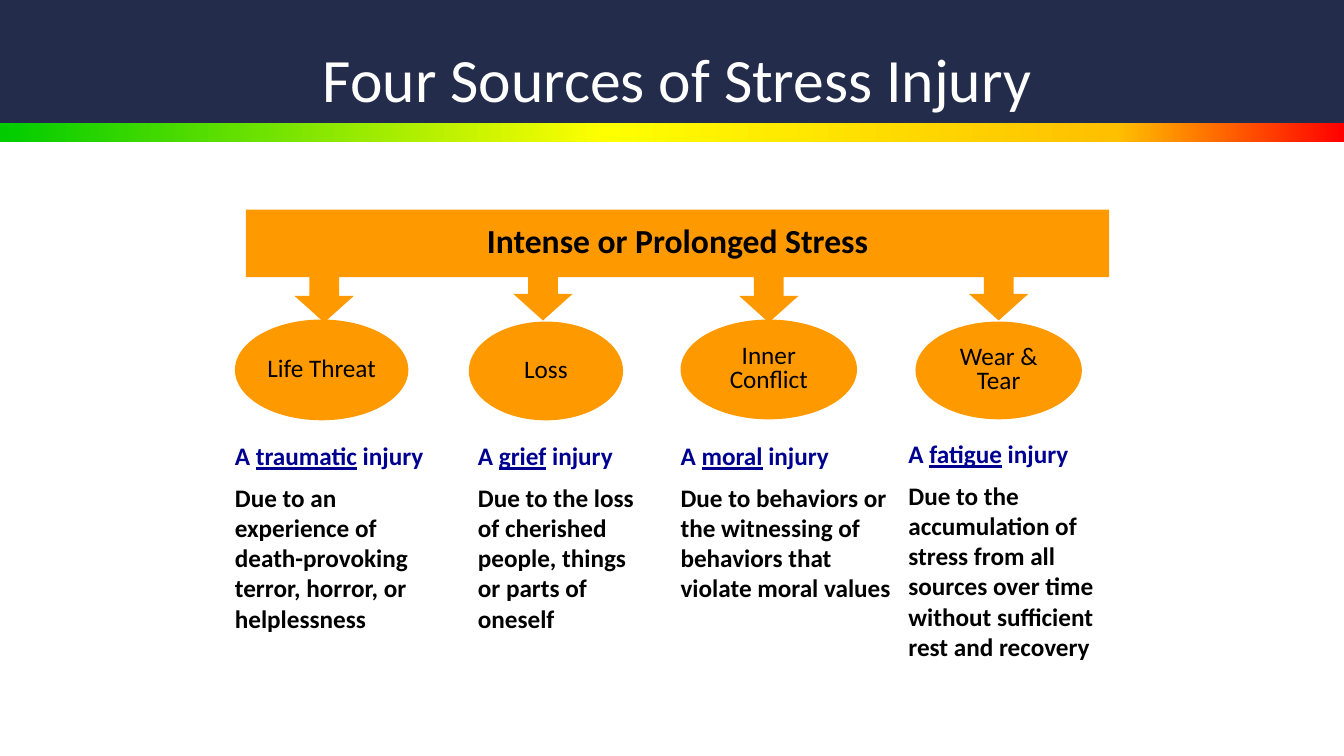
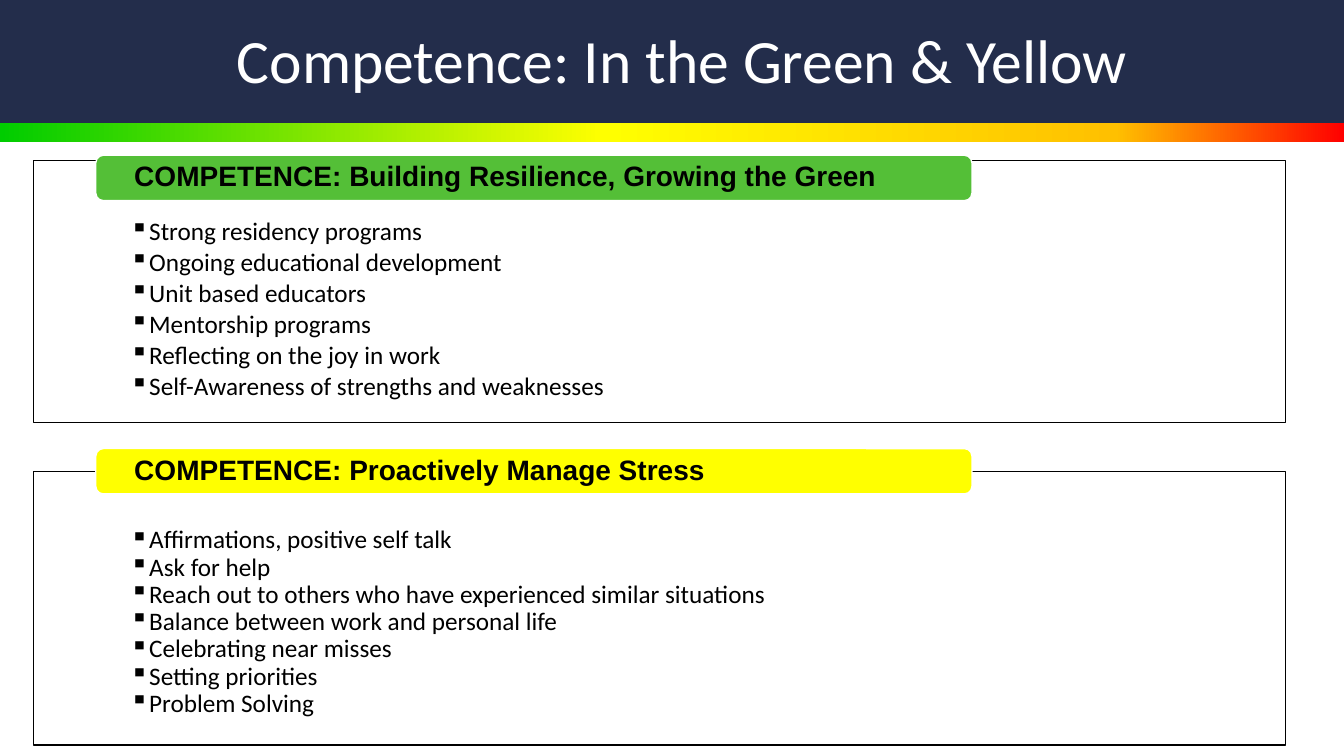
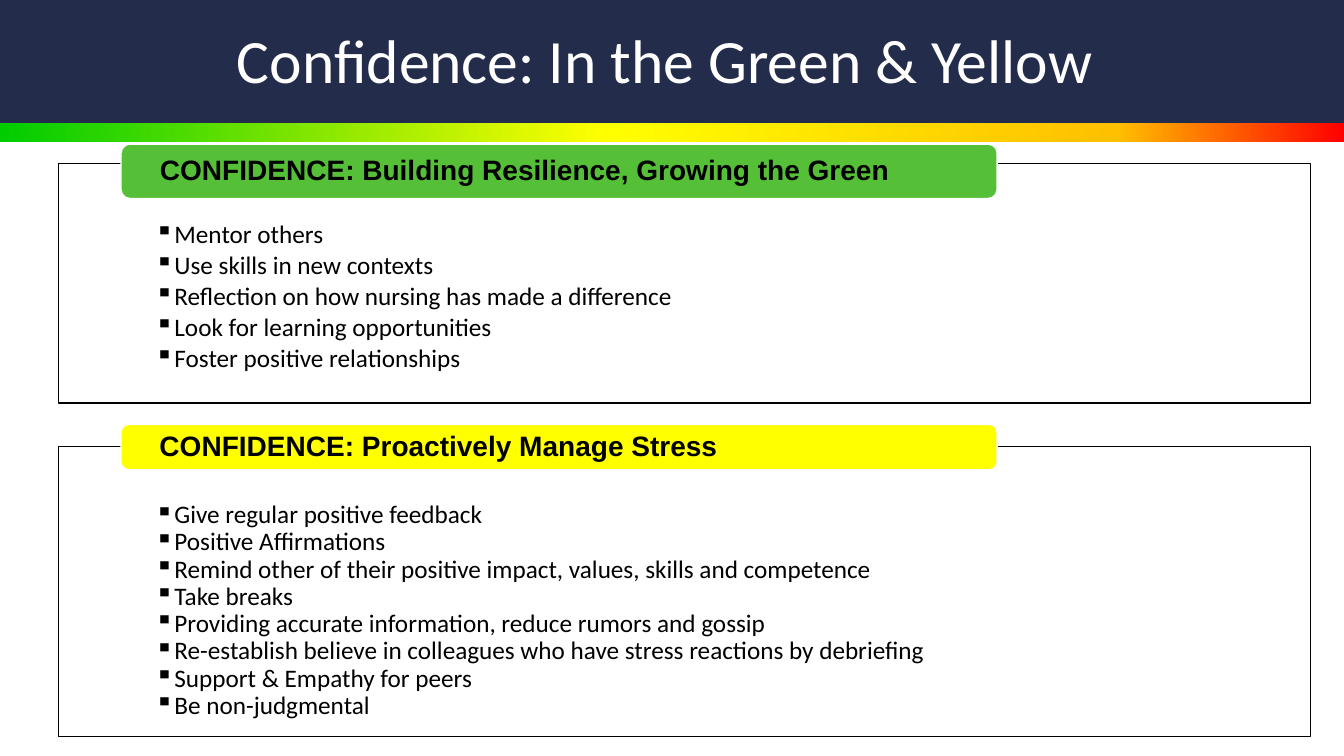
import pptx
import pptx.util
import pptx.dml.color
import pptx.enum.shapes
import pptx.enum.text
import pptx.oxml.ns
import lxml.etree

PX = 9144
SLIDE_WIDTH, SLIDE_HEIGHT = 1333, 750

RGBColor = pptx.dml.color.RGBColor
NAVY = RGBColor(0x23, 0x2D, 0x4B)
WHITE = RGBColor(0xFF, 0xFF, 0xFF)
BLACK = RGBColor(0x00, 0x00, 0x00)
ORANGE = RGBColor(0xFF, 0x99, 0x00)
BLUE = RGBColor(0x00, 0x00, 0x90)
GREEN = RGBColor(0x54, 0xBF, 0x37)
YELLOW = RGBColor(0xFF, 0xFF, 0x00)
SPECTRUM = [
    (0, RGBColor(0x00, 0xCC, 0x00)),
    (45, YELLOW),
    (83, RGBColor(0xFF, 0xC0, 0x00)),
    (100, RGBColor(0xFF, 0x00, 0x00)),
]

SHAPE = pptx.enum.shapes.MSO_SHAPE
ALIGN = pptx.enum.text.PP_ALIGN
ANCHOR = pptx.enum.text.MSO_ANCHOR
qn = pptx.oxml.ns.qn


def add_box(page, kind, place, fill=None, insets=(0, 0, 0, 0), anchor=ANCHOR.MIDDLE):
    lengths = [value * PX for value in place]
    if kind is None:
        box = page.shapes.add_textbox(*lengths)
    else:
        box = page.shapes.add_shape(kind, *lengths)
        box.shadow.inherit = False
        box.line.fill.background()
        box.fill.solid()
        box.fill.fore_color.rgb = fill
    frame = box.text_frame
    frame.word_wrap = True
    frame.vertical_anchor = anchor
    frame.margin_left, frame.margin_top, frame.margin_right, frame.margin_bottom = [
        value * PX for value in insets]
    return box


def format_text(para, size, color, align=ALIGN.LEFT, spacing=0.9, font="Calibri", bold=False):
    para.alignment = align
    para.line_spacing = spacing
    for span in para.runs:
        span.font.size = pptx.util.Pt(size)
        span.font.name = font
        span.font.bold = bold
        span.font.color.rgb = color


deck = pptx.Presentation()
deck.slide_width = SLIDE_WIDTH * PX
deck.slide_height = SLIDE_HEIGHT * PX

titles = [
    ("Four Sources of Stress Injury", (94, 27, 1156, 110), ALIGN.CENTER),
    ("Competence: In the Green & Yellow", (225, 8, 1017, 110), ALIGN.LEFT),
    ("Confidence: In the Green & Yellow", (225, 8, 1017, 110), ALIGN.LEFT),
]
pages = []
for title, place, align in titles:
    page = deck.slides.add_slide(deck.slide_layouts[6])
    pages.append(page)
    stripe = add_box(page, SHAPE.RECTANGLE, (0, 122, SLIDE_WIDTH, 19), YELLOW)
    stripe.fill.gradient()
    stripe.fill.gradient_angle = 0
    stops = stripe._element.spPr.find(".//" + qn("a:gsLst"))
    for stop in list(stops):
        stops.remove(stop)
    for percent, color in SPECTRUM:
        stop = lxml.etree.SubElement(stops, qn("a:gs"), pos=str(percent * 1000))
        lxml.etree.SubElement(stop, qn("a:srgbClr"), val=str(color))
    add_box(page, SHAPE.RECTANGLE, (0, 0, SLIDE_WIDTH, 122), NAVY)
    title_box = add_box(page, None, place, insets=(10, 5, 10, 5))
    title_box.text_frame.text = title
    format_text(title_box.text_frame.paragraphs[0], 44, WHITE, align)

sources_page, competence_page, confidence_page = pages

sources = [
    ("Life Threat", (233, 317, 172, 100), (292, 267), (233, 437, 197, 234), "traumatic",
     "Due to an experience of death-provoking terror, horror, or helplessness"),
    ("Loss", (465, 319, 153, 98), (509, 265), (474, 437, 174, 193), "grief",
     "Due to the loss of cherished people, things or parts of oneself"),
    ("Inner Conflict", (675, 317, 175, 99), (733, 267), (675, 437, 211, 161), "moral",
     "Due to behaviors or the witnessing of behaviors that violate moral values"),
    ("Wear & Tear", (908, 319, 165, 97), (961, 265), (901, 435, 216, 262), "fatigue",
     "Due to the accumulation of stress from all sources over time "
     "without sufficient rest and recovery"),
]
for source, oval_place, arrow_corner, note_place, injury, cause in sources:
    oval = add_box(sources_page, SHAPE.OVAL, oval_place, ORANGE)
    oval.text_frame.text = source
    format_text(oval.text_frame.paragraphs[0], 18, BLACK, ALIGN.CENTER, 0.8)

    add_box(sources_page, SHAPE.DOWN_ARROW, (*arrow_corner, 59, 53), ORANGE)

    note = add_box(sources_page, None, note_place, anchor=ANCHOR.TOP).text_frame
    heading = note.paragraphs[0]
    for words in ("A ", injury, " injury"):
        span = heading.add_run()
        span.text = words
        span.font.underline = words == injury
    detail = note.add_paragraph()
    detail.text = cause
    for para, color in ((heading, BLUE), (detail, BLACK)):
        para.space_before = pptx.util.Pt(8)
        format_text(para, 18, color, spacing=1.0, bold=True)

stress_bar = add_box(sources_page, SHAPE.RECTANGLE, (244, 208, 856, 67), ORANGE, (10, 10, 10, 10))
stress_bar.text_frame.text = "Intense or Prolonged Stress"
format_text(stress_bar.text_frame.paragraphs[0], 24, BLACK, ALIGN.CENTER, 0.8, bold=True)

panels = [
    (competence_page, 33, (159, 260), (154, 45), GREEN, 2.7,
     "COMPETENCE: Building Resilience, Growing the Green",
     ["Strong residency programs", "Ongoing educational development", "Unit based educators",
      "Mentorship programs", "Reflecting on the joy in work",
      "Self-Awareness of strengths and weaknesses"]),
    (competence_page, 33, (468, 271), (445, 45), YELLOW, 0,
     "COMPETENCE: Proactively Manage Stress",
     ["Affirmations, positive self talk", "Ask for help",
      "Reach out to others who have experienced similar situations",
      "Balance between work and personal life", "Celebrating near misses",
      "Setting priorities", "Problem Solving"]),
    (confidence_page, 58, (162, 238), (143, 54), GREEN, 2.7,
     "CONFIDENCE: Building Resilience, Growing the Green",
     ["Mentor others", "Use skills in new contexts",
      "Reflection on how nursing has made a difference",
      "Look for learning opportunities", "Foster positive relationships"]),
    (confidence_page, 58, (443, 288), (421, 45), YELLOW, 0,
     "CONFIDENCE: Proactively Manage Stress",
     ["Give regular positive feedback", "Positive Affirmations",
      "Remind other of their positive impact, values, skills and competence", "Take breaks",
      "Providing accurate information, reduce rumors and gossip",
      "Re-establish believe in colleagues who have stress reactions by debriefing",
      "Support & Empathy for peers", "Be non-judgmental"]),
]
for page, left, (top, height), (tab_top, tab_height), color, gap, heading, items in panels:
    list_top = 58 if gap else 55
    panel = add_box(page, SHAPE.RECTANGLE, (left, top, 1242, height), WHITE,
                    (96, list_top, 96, 12), ANCHOR.TOP)
    fill_color = panel._element.spPr.find(qn("a:solidFill")).find(qn("a:srgbClr"))
    lxml.etree.SubElement(fill_color, qn("a:alpha"), val="90000")
    panel.line.color.rgb = BLACK
    panel.line.width = pptx.util.Pt(1)
    panel.text_frame.text = "\n".join(items)
    for para in panel.text_frame.paragraphs:
        format_text(para, 18, BLACK)
        para.space_after = pptx.util.Pt(gap)
        properties = para._p.get_or_add_pPr()
        properties.set("marL", str(19 * PX))
        properties.set("indent", str(-19 * PX))
        lxml.etree.SubElement(properties, qn("a:buChar"), char="▪")

    tab = add_box(page, SHAPE.ROUNDED_RECTANGLE, (left + 62, tab_top, 869, tab_height), color,
                  (36, 0, 36, 0))
    tab.line.color.rgb = WHITE
    tab.line.width = pptx.util.Pt(1)
    tab.text_frame.text = heading
    format_text(tab.text_frame.paragraphs[0], 20, BLACK, font="Arial", bold=True)

deck.save("out.pptx")
